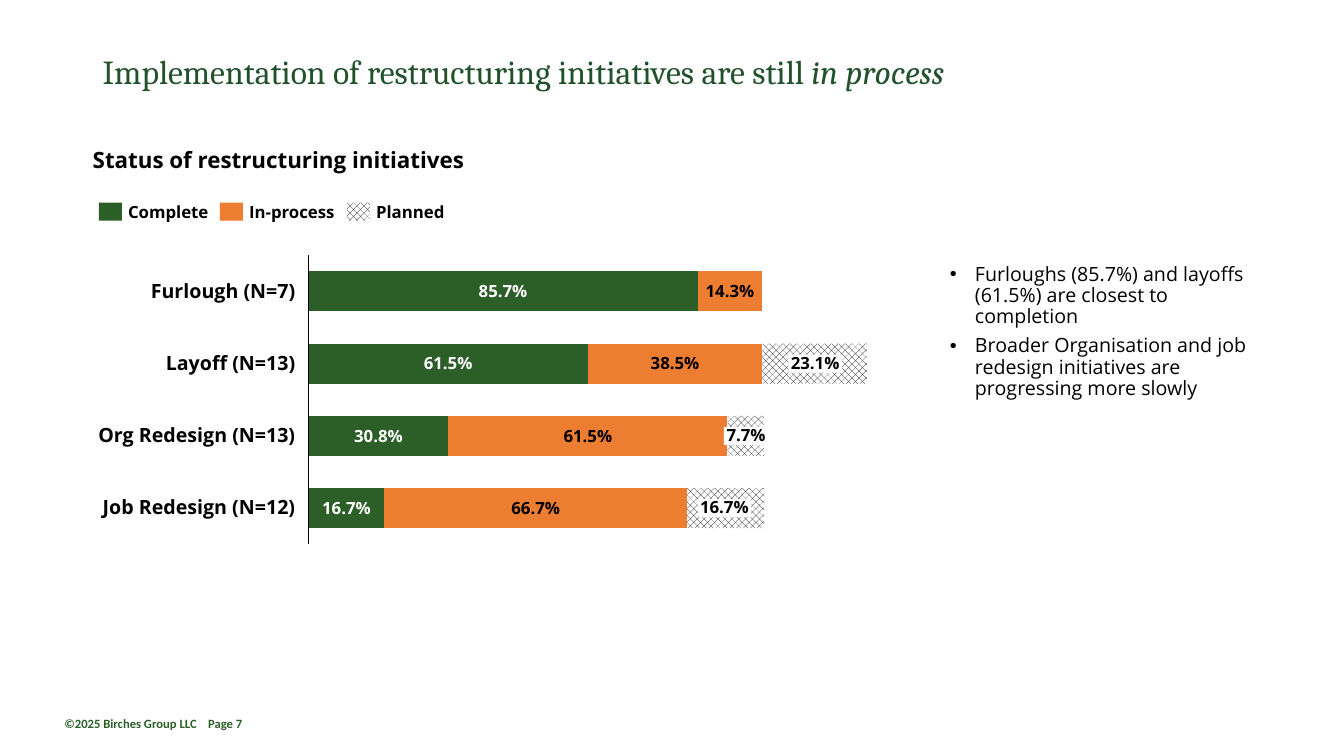
import pptx
import pptx.chart.data
import pptx.dml.color
import pptx.enum.chart
import pptx.enum.dml
import pptx.enum.shapes
import pptx.enum.text
import pptx.oxml
import pptx.oxml.ns
import pptx.util
from pptx.util import Inches

GREEN, ORANGE, BLACK, WHITE = "2C5E28", "ED7D31", "000000", "FFFFFF"
HATCH = "hatch"
FONT = "Open Sans"
ALIGN = pptx.enum.text.PP_ALIGN
ANCHOR = pptx.enum.text.MSO_ANCHOR
ROW_STEP = 0.717

INITIATIVES = ["Furlough (N=7)", "Layoff (N=13)", "Org Redesign (N=13)", "Job Redesign (N=12)"]
STATUSES = [
    ("Complete", GREEN, WHITE, (85.7, 61.5, 30.8, 16.7)),
    ("In-process", ORANGE, BLACK, (14.3, 38.5, 61.5, 66.7)),
    ("Planned", HATCH, None, (0, 23, 8, 17)),
]
LEGEND = [(0.98, 0.8), (2.18, 0.85), (3.44, 0.68)]
PLANNED_TAGS = [("23.1%", 7.82, 0.53), ("7.7%", 7.18, 0.44), ("16.7%", 6.92, 0.53)]
FINDINGS = [
    "Furloughs (85.7%) and layoffs (61.5%) are closest to completion",
    "Broader Organisation and job redesign initiatives are progressing more slowly",
]


def rgb(color):
    return pptx.dml.color.RGBColor.from_string(color)


def paint(fill, color):
    if color == HATCH:
        fill.patterned()
        fill.pattern = pptx.enum.dml.MSO_PATTERN.PERCENT_50
        fill.fore_color.rgb = rgb(BLACK)
        fill.back_color.rgb = rgb(WHITE)
    else:
        fill.solid()
        fill.fore_color.rgb = rgb(color)


def set_font(font, size, color=BLACK, bold=True, name=FONT):
    font.name = name
    font.size = pptx.util.Pt(size)
    font.bold = bold
    font.color.rgb = rgb(color)


def write(shape, text, size, align=ALIGN.LEFT, anchor=ANCHOR.MIDDLE,
          inset=(0, 0), wrap=False, spacing=0.9, **style):
    frame = shape.text_frame
    frame.word_wrap = wrap
    frame.vertical_anchor = anchor
    frame.margin_left = frame.margin_right = Inches(inset[0])
    frame.margin_top = frame.margin_bottom = Inches(inset[1])
    frame.text = text
    for paragraph in frame.paragraphs:
        paragraph.alignment = align
        paragraph.line_spacing = spacing
        for run in paragraph.runs:
            set_font(run.font, size, **style)
    return frame


def add_text(slide, box, text, size, **options):
    return write(slide.shapes.add_textbox(*map(Inches, box)), text, size, **options)


def add_block(slide, box, color):
    block = slide.shapes.add_shape(pptx.enum.shapes.MSO_SHAPE.RECTANGLE, *map(Inches, box))
    block.shadow.inherit = False
    paint(block.fill, color)
    block.line.fill.background()
    return block


def add_title(slide):
    frame = add_text(slide, (0.92, 0.4, 11.5, 0.67),
                     "Implementation of restructuring initiatives are still ", 24,
                     inset=(0.1, 0.05), wrap=True, color="22522C", bold=False, name="Cambria")
    emphasis = frame.paragraphs[0].add_run()
    emphasis.text = "in process"
    set_font(emphasis.font, 24, "22522C", False, "Cambria")
    emphasis.font.italic = True


def add_status_chart(slide):
    data = pptx.chart.data.CategoryChartData(number_format='0.0"%"')
    data.categories = INITIATIVES
    for name, _, _, values in STATUSES:
        data.add_series(name, values)
    chart = slide.shapes.add_chart(
        pptx.enum.chart.XL_CHART_TYPE.BAR_STACKED,
        Inches(2.97), Inches(2.24), Inches(5.72), Inches(3.45), data).chart
    set_font(chart.font, 10, bold=False, name="Calibri")
    chart.has_legend = False
    chart.has_title = False

    categories = chart.category_axis
    categories.reverse_order = True
    categories.tick_label_position = pptx.enum.chart.XL_TICK_LABEL_POSITION.NONE
    categories.major_tick_mark = pptx.enum.chart.XL_TICK_MARK.NONE
    categories.format.line.color.rgb = rgb(BLACK)
    categories.format.line.width = pptx.util.Pt(0.75)
    percent = chart.value_axis
    percent.minimum_scale = 0
    percent.maximum_scale = 123
    percent.has_major_gridlines = False
    percent.visible = False

    plot = chart.plots[0]
    plot.gap_width = 80
    plot.overlap = 100
    plot.vary_by_categories = False
    for series, (_, color, label_color, _) in zip(plot.series, STATUSES):
        paint(series.format.fill, color)
        series.invert_if_negative = False
        if label_color:
            labels = series.data_labels
            labels.show_value = True
            labels.number_format = '0.0"%"'
            labels.number_format_is_linked = False
            labels.position = pptx.enum.chart.XL_LABEL_POSITION.CENTER
            set_font(labels.font, 12, label_color)
    fix_plot_area(chart, x=0.016, y=0.085, w=0.968, h=0.831)


def fix_plot_area(chart, **fractions):
    area = chart.plots[0]._element.getparent()
    for layout in area.findall(pptx.oxml.ns.qn("c:layout")):
        area.remove(layout)
    modes = '<c:layoutTarget val="inner"/><c:xMode val="edge"/><c:yMode val="edge"/>'
    sizes = "".join(f'<c:{key} val="{value}"/>' for key, value in fractions.items())
    area.insert(0, pptx.oxml.parse_xml(
        f'<c:layout {pptx.oxml.ns.nsdecls("c")}>'
        f'<c:manualLayout>{modes}{sizes}</c:manualLayout></c:layout>'))


def add_row_labels(slide):
    for row, name in enumerate(INITIATIVES):
        add_text(slide, (0.83, 2.79 + row * ROW_STEP, 2.1, 0.21), name, 14,
                 align=ALIGN.RIGHT, wrap=True)


def add_planned_tags(slide):
    for row, (share, left, width) in enumerate(PLANNED_TAGS, start=1):
        tag = add_block(slide, (left, 2.8 + row * ROW_STEP, width, 0.18), WHITE)
        write(tag, share, 12, align=ALIGN.CENTER, inset=(0.02, 0))


def add_legend(slide):
    for (left, width), (name, color, _, _) in zip(LEGEND, STATUSES):
        add_block(slide, (left, 2.01, 0.23, 0.18), color)
        add_text(slide, (left + 0.29, 2.02, width, 0.18), name, 12)


def add_findings(slide):
    frame = add_text(slide, (9.42, 2.62, 2.99, 1.34), "\n".join(FINDINGS), 14,
                     anchor=ANCHOR.TOP, wrap=True, bold=False)
    namespace = pptx.oxml.ns.nsdecls("a")
    for paragraph in frame.paragraphs:
        paragraph.space_after = pptx.util.Pt(6)
        properties = paragraph._p.get_or_add_pPr()
        properties.set("marL", str(Inches(0.25)))
        properties.set("indent", str(-Inches(0.25)))
        for bullet in ('buFont {} typeface="Arial"', 'buChar {} char="•"'):
            properties.append(pptx.oxml.parse_xml(f"<a:{bullet.format(namespace)}/>"))


def main():
    presentation = pptx.Presentation()
    presentation.slide_width = Inches(13.33)
    presentation.slide_height = Inches(7.5)
    slide = presentation.slides.add_slide(presentation.slide_layouts[6])
    add_text(slide, (0.54, 7.05, 3.02, 0.25), "©2025 Birches Group LLC    Page 7", 9,
             anchor=ANCHOR.TOP, inset=(0.1, 0.05), wrap=True, spacing=1.0,
             color=GREEN, name="Calibri")
    add_title(slide)
    add_status_chart(slide)
    add_row_labels(slide)
    add_planned_tags(slide)
    add_legend(slide)
    add_text(slide, (0.92, 1.48, 11.5, 0.21), "Status of restructuring initiatives", 16,
             anchor=ANCHOR.TOP)
    add_findings(slide)
    presentation.save("out.pptx")


if __name__ == "__main__":
    main()
